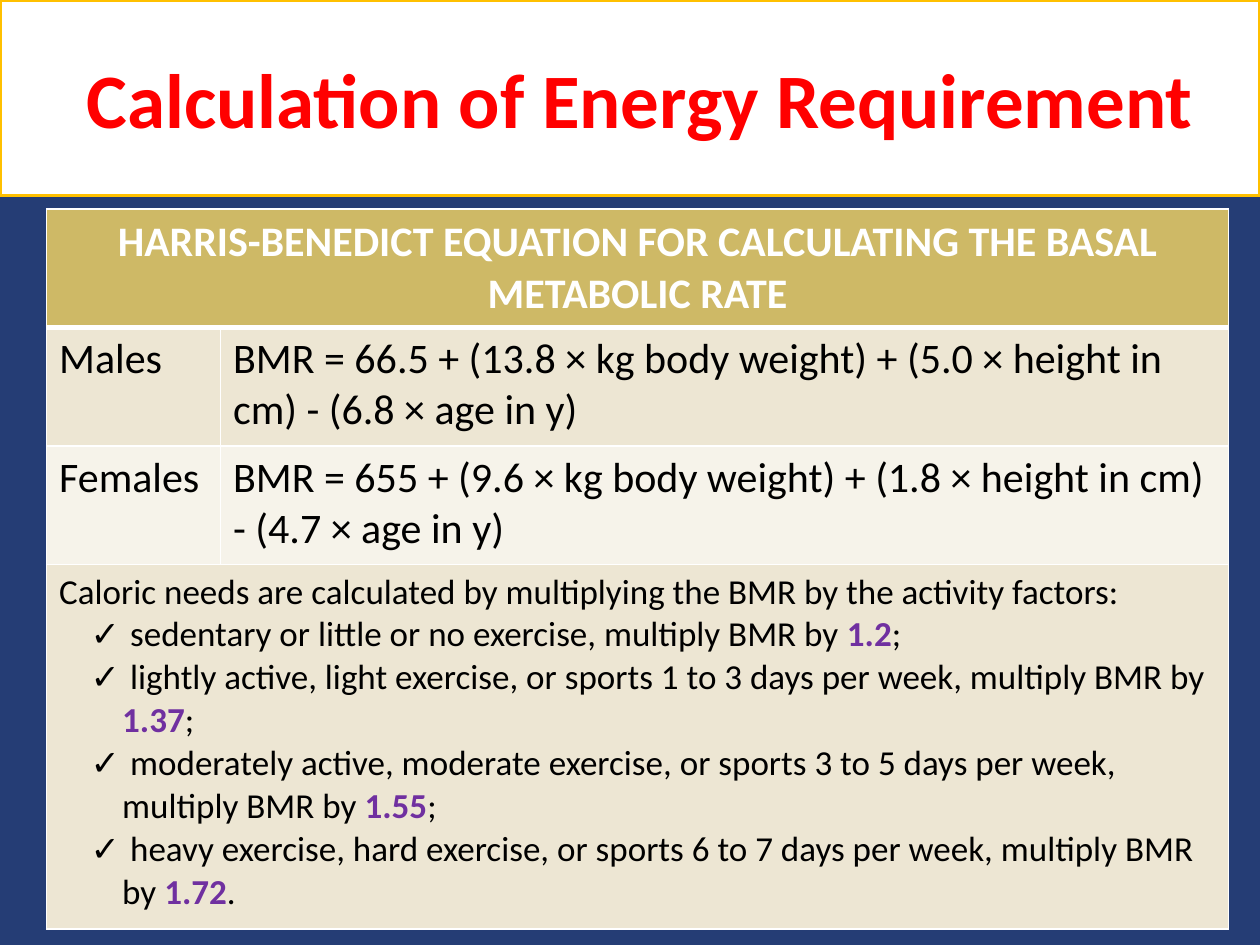
from pptx import Presentation
from pptx.dml.color import RGBColor as Rgb
from pptx.enum.text import MSO_ANCHOR as Anc, PP_ALIGN as Al
from pptx.oxml.ns import qn
from pptx.util import Inches as In, Pt
from lxml.etree import SubElement as Sub

FACTS = [
    ("sedentary or little or no exercise", "1.2", ";"),
    ("lightly active, light exercise, or sports 1 to 3 days per week", "1.37", ";"),
    ("moderately active, moderate exercise, or sports 3 to 5 days per week", "1.55", ";"),
    ("heavy exercise, hard exercise, or sports 6 to 7 days per week", "1.72", "."),
]
HEAD = "HARRIS-BENEDICT EQUATION FOR CALCULATING THE BASAL METABOLIC RATE"
MALE = "BMR = 66.5 + (13.8 × kg body weight) + (5.0 × height in cm) - (6.8 × age in y)"
FEM = "BMR = 655 + (9.6 × kg body weight) + (1.8 × height in cm) - (4.7 × age in y)"
NEEDS = "Caloric needs are calculated by multiplying the BMR by the activity factors:"


def color(code):
    return Rgb.from_string(code)


def write(para, text, size=24, fill="000000", bold=False, align=None):
    if align is not None:
        para.alignment = align
    run = para.add_run()
    run.text = text
    font = run.font
    font.name, font.size, font.bold = "Calibri", Pt(size), bold
    font.color.rgb = color(fill)


class Deck:
    gold, sand, pale = "CEB966", "EDE6D3", "F6F3EA"
    white, red, plum = "FFFFFF", "FF0000", "7030A0"
    navy, amber = "253D75", "FFC000"

    def __init__(self):
        self.prs = Presentation()
        self.prs.slide_width, self.prs.slide_height = In(10), In(7.5)
        self.slide = self.prs.slides.add_slide(self.prs.slide_layouts[5])
        back = self.slide.background.fill
        back.solid()
        back.fore_color.rgb = color(self.navy)

    def place(self, x, y, w, h):
        wide, high = self.prs.slide_width, self.prs.slide_height
        return [round(n) for n in (x * wide, y * high, w * wide, h * high)]

    def title(self, text, box):
        shape = self.slide.shapes.title
        shape.left, shape.top, shape.width, shape.height = self.place(*box)
        shape.fill.solid()
        shape.fill.fore_color.rgb = color(self.white)
        shape.line.color.rgb = color(self.amber)
        shape.line.width = Pt(2)
        shape.text_frame.vertical_anchor = Anc.MIDDLE
        para = shape.text_frame.paragraphs[0]
        write(para, text, size=44, fill=self.red, bold=True, align=Al.CENTER)
        para._p.get_or_add_pPr().set("rtl", "1")

    def table(self, box, cols, rows):
        left, top, wide, high = self.place(*box)
        shapes = self.slide.shapes
        grid = shapes.add_table(len(rows), len(cols), left, top, wide, high).table
        for col, part in zip(grid.columns, cols):
            col.width = round(wide * part / sum(cols))
        for row, part in zip(grid.rows, rows):
            row.height = round(high * part / sum(rows))
        return grid

    def cell(self, cell, fill, top=1, low=1):
        props = cell._tc.get_or_add_tcPr()
        for side, width in zip("LRTB", (1, 1, top, low)):
            line = Sub(props, qn("a:ln" + side), w=str(Pt(width)))
            Sub(Sub(line, qn("a:solidFill")), qn("a:srgbClr"), val=self.white)
        cell.fill.solid()
        cell.fill.fore_color.rgb = color(fill)

    def bullet(self, frame, text, rate, end):
        para = frame.add_paragraph()
        para.level = 1
        props = para._p.get_or_add_pPr()
        props.set("marL", str(In(0.5)))
        props.set("indent", str(In(-0.25)))
        Sub(props, qn("a:buFont"), typeface="Calibri")
        Sub(props, qn("a:buChar"), char="✓")
        write(para, f" {text}, multiply BMR by ", size=20)
        write(para, rate, size=20, fill=self.plum, bold=True)
        write(para, end, size=20)


def main():
    deck = Deck()
    deck.title("Calculation of Energy Requirement ", (0, 0, 1, 0.207))
    grid = deck.table((0.037, 0.221, 0.938, 0.762), (1.38, 8), (0.94, 0.94, 0.94, 2.89))
    fills = (deck.gold, deck.sand, deck.pale, deck.sand)
    for r, fill in enumerate(fills):
        for c in range(2):
            deck.cell(grid.cell(r, c), fill, top=3 if r == 1 else 1, low=3 if r == 0 else 1)
    for r in (0, 3):
        grid.cell(r, 0).merge(grid.cell(r, 1))

    head = grid.cell(0, 0)
    head.vertical_anchor = Anc.MIDDLE
    write(head.text_frame.paragraphs[0], HEAD, fill=deck.white, bold=True, align=Al.CENTER)
    for r, pair in enumerate((("Males", MALE), ("Females", FEM)), 1):
        for c, text in enumerate(pair):
            write(grid.cell(r, c).text_frame.paragraphs[0], text)
    notes = grid.cell(3, 0).text_frame
    write(notes.paragraphs[0], NEEDS, size=20)
    for fact in FACTS:
        deck.bullet(notes, *fact)
    deck.prs.save("out.pptx")


if __name__ == "__main__":
    main()
